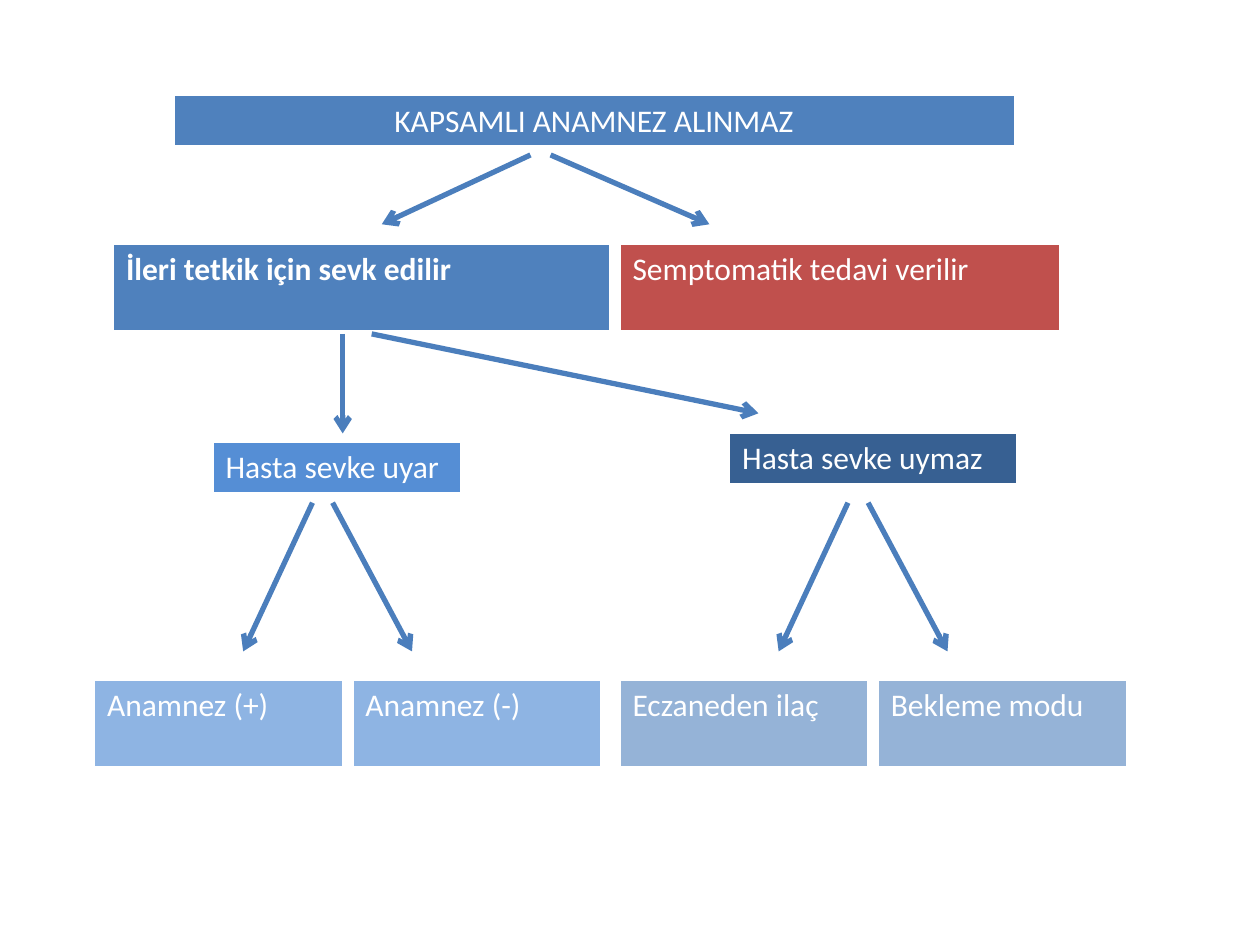
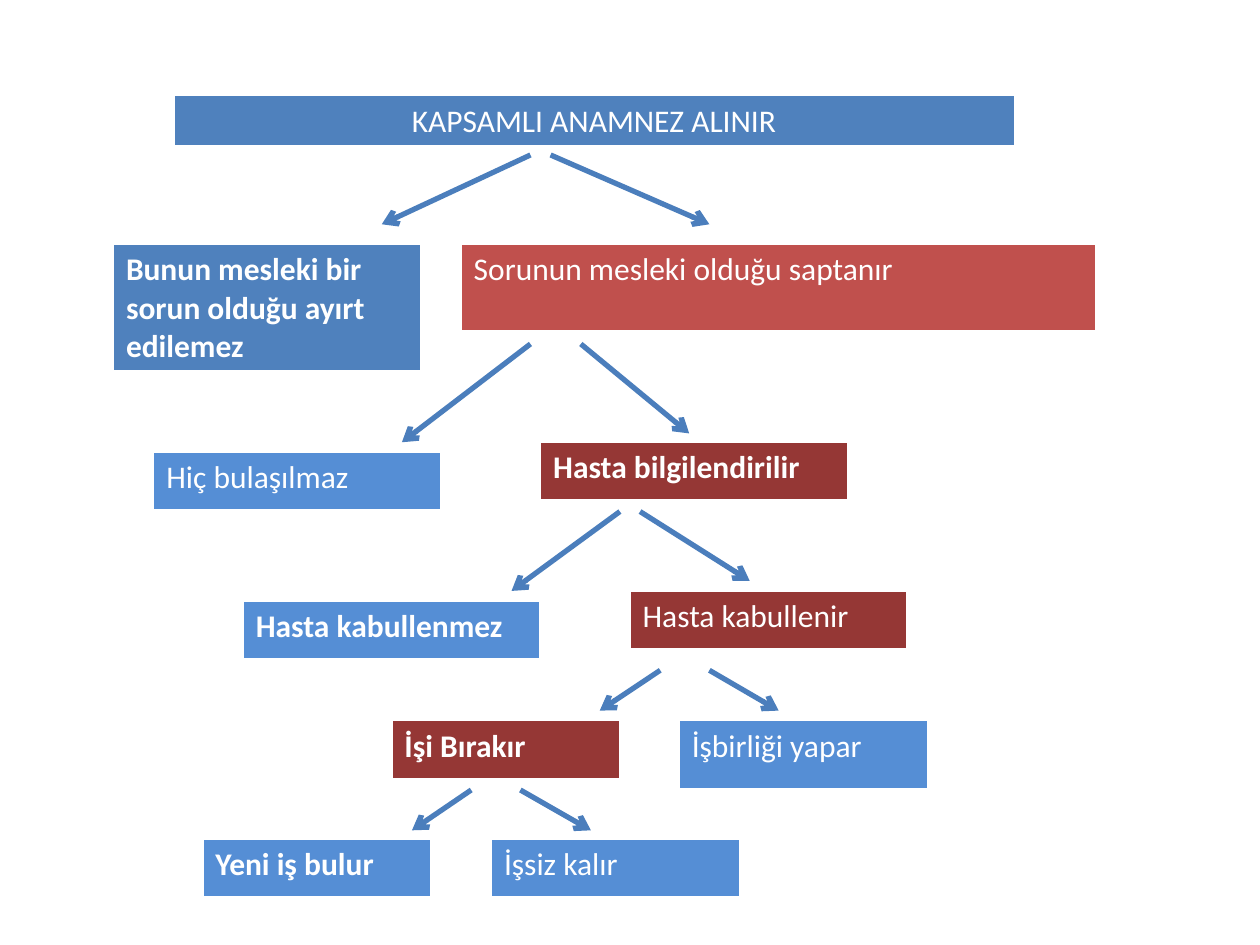
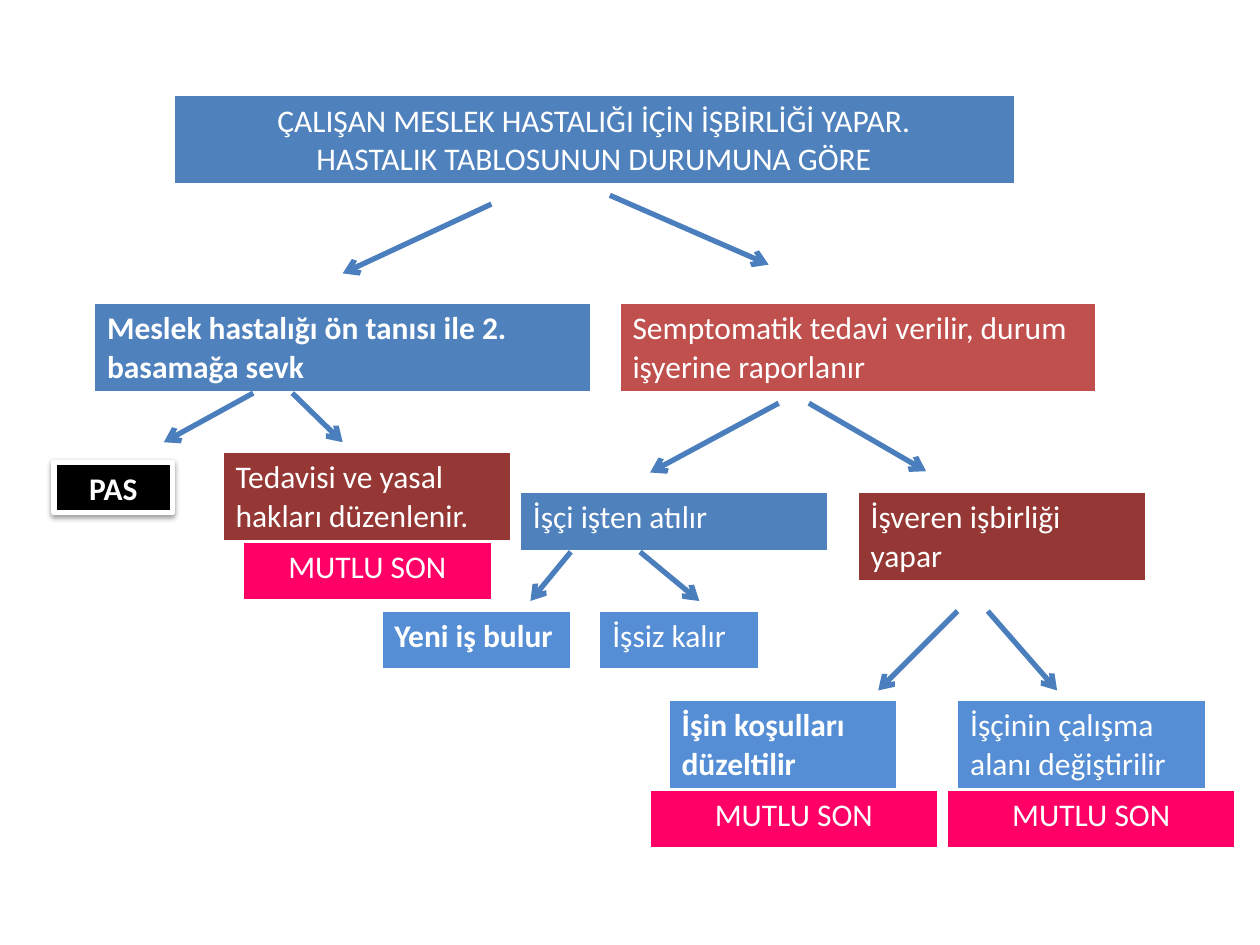
import pptx
import pptx.util
import pptx.dml.color
import pptx.enum.shapes
import pptx.enum.text
import pptx.oxml
import pptx.oxml.ns
from pptx.util import Inches

# Shared look
FONT = "Calibri"
WHITE, BLACK = "FFFFFF", "000000"
BLUE, RED, DARK_RED, PINK = "4F81BD", "C0504D", "953735", "FF0066"
MID_BLUE, NAVY, LIGHT_BLUE, GREY_BLUE = "558ED5", "376092", "8EB4E3", "95B3D7"
ARROW = "4B7EBC"
NS = pptx.oxml.ns.nsdecls("a")
BORDERS = {"lnL": 1, "lnR": 1, "lnT": 1, "lnB": 3}
TITLE_X, TITLE_Y, TITLE_W = 1.38, 0.76, 6.67


def paint(fill, color):
    fill.solid()
    fill.fore_color.rgb = pptx.dml.color.RGBColor.from_string(color)


def write(tf, text, size=18, color=WHITE, bold=False, center=False):
    for i, line in enumerate(text.split("\n")):
        p = tf.paragraphs[0] if i == 0 else tf.add_paragraph()
        p.alignment = (pptx.enum.text.PP_ALIGN.CENTER if center
                       else pptx.enum.text.PP_ALIGN.LEFT)
        r = p.add_run()
        r.text = line
        r.font.name = FONT
        r.font.size = pptx.util.Pt(size)
        r.font.bold = bold
        paint(r.font.fill, color)


# Each slide: title, title height, boxes (x, y, w, h, fill, text, bold),
# arrows (x1, y1, x2, y2)
slides = [
    ("KAPSAMLI ANAMNEZ ALINMAZ", 0.41, [
        (0.9, 1.94, 3.94, 0.7, BLUE, "İleri tetkik için sevk edilir", True),
        (4.92, 1.94, 3.49, 0.7, RED, "Semptomatik tedavi verilir", False),
        (1.69, 3.51, 1.97, 0.41, MID_BLUE, "Hasta sevke uyar", False),
        (5.79, 3.44, 2.28, 0.41, NAVY, "Hasta sevke uymaz", False),
        (0.75, 5.4, 1.97, 0.7, LIGHT_BLUE, "Anamnez (+)", False),
        (2.8, 5.4, 1.97, 0.7, LIGHT_BLUE, "Anamnez (-)", False),
        (4.92, 5.4, 1.97, 0.7, GREY_BLUE, "Eczaneden ilaç", False),
        (6.97, 5.4, 1.97, 0.7, GREY_BLUE, "Bekleme modu", False),
    ], [
        (4.21, 1.23, 3.03, 1.78), (4.37, 1.23, 5.63, 1.78),
        (2.72, 2.65, 2.72, 3.44), (2.95, 2.65, 6.02, 3.28),
        (2.48, 3.99, 1.93, 5.17), (2.64, 3.99, 3.27, 5.17),
        (6.73, 3.99, 6.18, 5.17), (6.89, 3.99, 7.52, 5.17),
    ]),
    ("KAPSAMLI ANAMNEZ ALINIR", 0.41, [
        (0.9, 1.94, 2.44, 1, BLUE, "Bunun mesleki bir sorun olduğu ayırt edilemez", True),
        (3.66, 1.94, 5.04, 0.7, RED, "Sorunun mesleki olduğu saptanır", False),
        (1.22, 3.59, 2.28, 0.47, MID_BLUE, "Hiç bulaşılmaz", False),
        (4.29, 3.51, 2.44, 0.47, DARK_RED, "Hasta bilgilendirilir", True),
        (1.93, 4.77, 2.35, 0.47, MID_BLUE, "Hasta kabullenmez", True),
        (5, 4.69, 2.2, 0.47, DARK_RED, "Hasta kabullenir", False),
        (3.11, 5.72, 1.81, 0.47, DARK_RED, "İşi Bırakır", True),
        (5.39, 5.72, 1.97, 0.55, MID_BLUE, "İşbirliği yapar", False),
        (1.61, 6.66, 1.81, 0.47, MID_BLUE, "Yeni iş bulur", True),
        (3.9, 6.66, 1.97, 0.47, MID_BLUE, "İşsiz kalır", False),
    ], [
        (4.21, 1.23, 3.03, 1.78), (4.37, 1.23, 5.63, 1.78),
        (4.21, 2.73, 3.19, 3.51), (4.61, 2.73, 5.47, 3.44),
        (4.92, 4.06, 4.06, 4.69), (5.08, 4.06, 5.95, 4.61),
        (5.24, 5.32, 4.76, 5.64), (5.63, 5.32, 6.18, 5.64),
        (3.74, 6.27, 3.27, 6.59), (4.13, 6.27, 4.69, 6.59),
    ]),
    ("ÇALIŞAN MESLEK HASTALIĞI İÇİN İŞBİRLİĞİ YAPAR.\n"
     "HASTALIK TABLOSUNUN DURUMUNA GÖRE", 0.7, [
        (0.75, 2.41, 3.94, 0.7, BLUE, "Meslek hastalığı ön tanısı ile 2. basamağa sevk", True),
        (4.92, 2.41, 3.78, 0.7, RED,
         "Semptomatik tedavi verilir, durum işyerine raporlanır", False),
        (1.77, 3.59, 2.28, 0.7, DARK_RED, "Tedavisi ve yasal hakları düzenlenir.", False),
        (4.13, 3.91, 2.44, 0.47, BLUE, "İşçi işten atılır", False),
        (6.81, 3.91, 2.28, 0.7, DARK_RED, "İşveren işbirliği yapar", False),
        (1.93, 4.3, 1.97, 0.47, PINK, "MUTLU SON", False),
        (3.03, 4.85, 1.5, 0.47, MID_BLUE, "Yeni iş bulur", True),
        (4.76, 4.85, 1.26, 0.47, MID_BLUE, "İşsiz kalır", False),
        (5.31, 5.56, 1.81, 0.7, MID_BLUE, "İşin koşulları düzeltilir", True),
        (7.6, 5.56, 1.97, 0.7, MID_BLUE, "İşçinin çalışma alanı değiştirilir", False),
        (5.16, 6.27, 2.28, 0.47, PINK, "MUTLU SON", False),
        (7.52, 6.27, 2.28, 0.47, PINK, "MUTLU SON", False),
    ], [
        (3.9, 1.62, 2.72, 2.17), (4.84, 1.55, 6.1, 2.1),
        (2.01, 3.12, 1.3, 3.51), (2.32, 3.12, 2.72, 3.51),
        (6.18, 3.2, 5.16, 3.75), (6.42, 3.2, 7.35, 3.74),
        (4.53, 4.38, 4.21, 4.77), (5.08, 4.38, 5.55, 4.77),
        (7.6, 4.85, 6.97, 5.48), (7.84, 4.85, 8.39, 5.48),
    ]),
]

prs = pptx.Presentation()
prs.slide_width, prs.slide_height = Inches(10), Inches(7.5)

for title, title_h, boxes, arrows in slides:
    s = prs.slides.add_slide(prs.slide_layouts[6])
    title_box = (TITLE_X, TITLE_Y, TITLE_W, title_h, BLUE, title, False)

    # Boxes: one-cell tables with white borders
    for x, y, w, h, fill, text, bold in [title_box] + boxes:
        frame = s.shapes.add_table(1, 1, Inches(x), Inches(y), Inches(w), Inches(h))
        cell = frame.table.cell(0, 0)
        paint(cell.fill, fill)
        write(cell.text_frame, text, bold=bold, center=text == title or fill == PINK)
        tcPr = cell._tc.get_or_add_tcPr()
        for i, (side, width) in enumerate(BORDERS.items()):
            tcPr.insert(i, pptx.oxml.parse_xml(
                f'<a:{side} {NS} w="{width * 12700}"><a:solidFill>'
                f'<a:srgbClr val="{WHITE}"/></a:solidFill></a:{side}>'))

    # Arrows
    for ends in arrows:
        c = s.shapes.add_connector(pptx.enum.shapes.MSO_CONNECTOR.STRAIGHT,
                                   *[Inches(v) for v in ends])
        paint(c.line.fill, ARROW)
        c.line.width = pptx.util.Pt(3)
        c.line._get_or_add_ln().append(
            pptx.oxml.parse_xml(f'<a:tailEnd {NS} type="arrow"/>'))
        c._element.spPr.append(pptx.oxml.parse_xml(f"<a:effectLst {NS}/>"))

# PAS label with a soft shadow on the last slide
sp = s.shapes.add_shape(pptx.enum.shapes.MSO_SHAPE.RECTANGLE,
                        Inches(0.43), Inches(3.67), Inches(0.94), Inches(0.4))
paint(sp.fill, BLACK)
paint(sp.line.fill, WHITE)
sp.line.width = pptx.util.Pt(3)
sp.shadow.inherit = False
sp._element.spPr.find(pptx.oxml.ns.qn("a:effectLst")).append(pptx.oxml.parse_xml(
    f'<a:outerShdw {NS} blurRad="40000" dist="20000" dir="5400000" rotWithShape="0">'
    f'<a:srgbClr val="{BLACK}"><a:alpha val="38000"/></a:srgbClr></a:outerShdw>'))
sp.text_frame.word_wrap = True
write(sp.text_frame, "PAS", bold=True, center=True)

prs.save("out.pptx")
